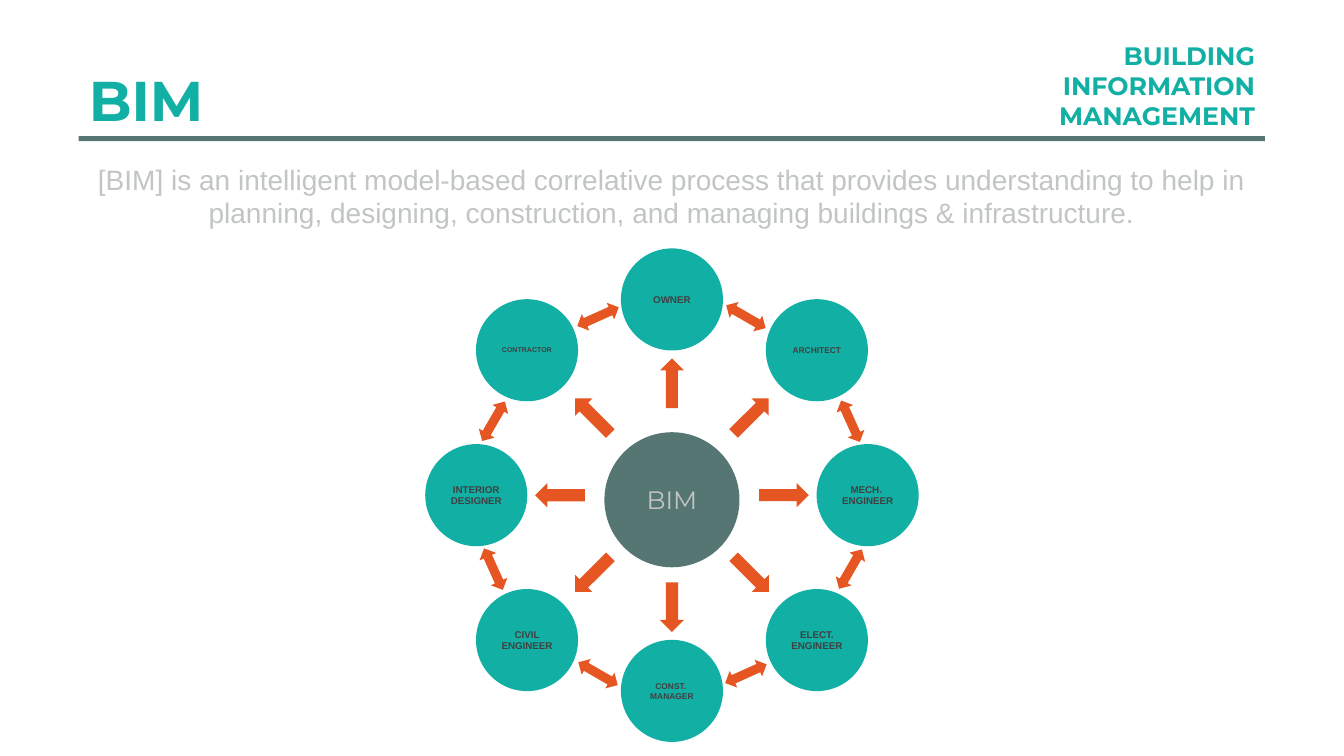
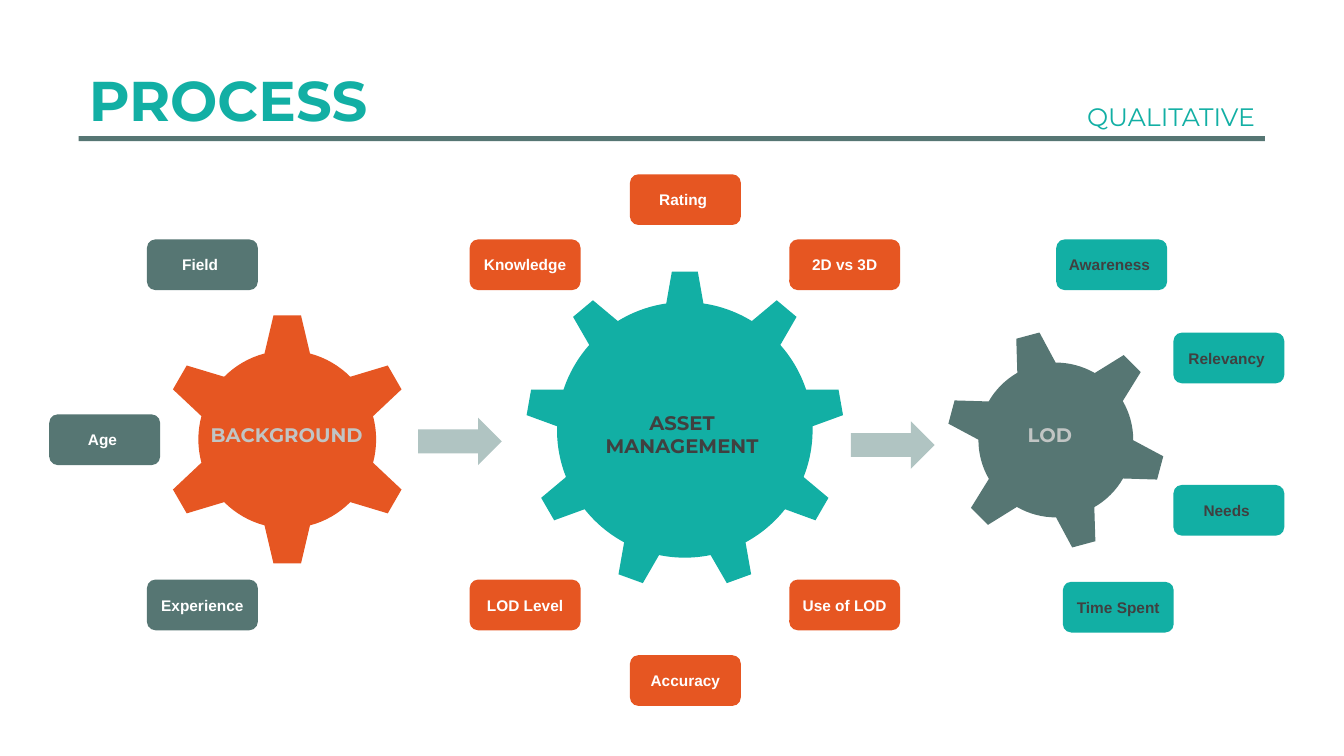
"""Build two slides: a ring of BIM roles and a gear process."""
from math import cos, radians, sin

from pptx import Presentation
from pptx.dml.color import RGBColor
from pptx.enum.shapes import MSO_SHAPE as SHAPE
from pptx.enum.text import MSO_ANCHOR as ANCHOR, MSO_AUTO_SIZE as AUTO, PP_ALIGN as ALIGN
from pptx.util import Pt

TEAL, SLATE, ORANGE, MIST = "12AFA4", "567673", "E65622", "B0C4C2"
SILVER, CHARCOAL, WHITE = "C1C5C4", "404040", "FFFFFF"
BODY, DISPLAY = "Arial", "Montserrat"
MARGIN, CONTENT_W = 56.2, 847.4
RIGHT_EDGE = MARGIN + CONTENT_W

DEFINITION = (
    "[BIM] is an intelligent model-based correlative process that provides understanding "
    "to help in planning, designing, construction, and managing buildings & infrastructure."
)
ROLES = [
    ("OWNER", 7), ("ARCHITECT", 6), ("MECH. \nENGINEER", 7), ("ELECT.\nENGINEER", 7),
    ("CONST. \nMANAGER", 6), ("CIVIL ENGINEER", 7), ("INTERIOR DESIGNER", 7), ("CONTRACTOR", 5),
]
RING_X, RING_Y = 480, 353.7
AXIS_REACH, DIAGONAL_REACH, SPOKE_REACH, LINK_REACH = 139.8, 146.4, 80, 138

GEARS = [
    ("BACKGROUND", SHAPE.GEAR_6, 205.2, 313.9, 181.4, 0, ORANGE, SILVER, 204.8),
    ("ASSET \nMANAGEMENT ", SHAPE.GEAR_9, 489.2, 307.1, 228.2, 0, TEAL, CHARCOAL, 489.2),
    ("LOD", SHAPE.GEAR_6, 754.2, 314.3, 158, -15, SLATE, SILVER, 749.9),
]
GEAR_LABEL_Y = 310.3
FACTORS = [
    (SLATE, WHITE, [("Field ", 105, 171), ("Age ", 35.2, 296), ("Experience ", 105, 414)]),
    (ORANGE, WHITE, [
        ("Knowledge ", 335.5, 171), ("Rating ", 450, 124.5), ("2D vs 3D", 563.8, 171),
        ("LOD Level", 335.5, 414), ("Accuracy", 450, 468), ("Use of LOD", 563.8, 414),
    ]),
    (TEAL, CHARCOAL, [
        ("Awareness ", 754.5, 171), ("Relevancy ", 838.2, 237.6),
        ("Needs ", 838.2, 346.4), ("Time Spent", 759.2, 415.6),
    ]),
]
FACTOR_W, FACTOR_H = 79.2, 36.2
FLOW_ARROWS = [(328.6, 315.3), (637.7, 317.9)]


def rgb(color):
    return RGBColor.from_string(color)


def write(part, text, size, color, font=BODY, bold=True, align=ALIGN.CENTER, anchor=ANCHOR.MIDDLE):
    frame = part.text_frame
    frame.text = text
    frame.word_wrap = True
    frame.auto_size = AUTO.NONE
    frame.vertical_anchor = anchor
    for paragraph in frame.paragraphs:
        paragraph.alignment = align
        paragraph.font.size = Pt(size)
        paragraph.font.name = font
        paragraph.font.bold = bold
        paragraph.font.color.rgb = rgb(color)


def add_figure(slide, kind, center_x, center_y, width, height, color, rotation=0):
    figure = slide.shapes.add_shape(
        kind, Pt(center_x - width / 2), Pt(center_y - height / 2), Pt(width), Pt(height))
    figure.shadow.inherit = False
    figure.fill.solid()
    figure.fill.fore_color.rgb = rgb(color)
    figure.line.fill.background()
    figure.rotation = rotation
    return figure


def add_label(slide, left, top, width, height, *text, **style):
    label = slide.shapes.add_textbox(Pt(left), Pt(top), Pt(width), Pt(height))
    write(label, *text, **style)
    return label


def add_titled_slide(deck, heading, subject, subject_top, subject_h, subject_bold):
    slide = deck.slides.add_slide(deck.slide_layouts[5])
    title = slide.shapes.title
    title.left, title.top, title.width, title.height = (
        Pt(MARGIN), Pt(43.2), Pt(600), Pt(55.4))
    write(title, heading, 40, TEAL, DISPLAY, align=ALIGN.LEFT, anchor=ANCHOR.TOP)
    add_figure(slide, SHAPE.RECTANGLE, MARGIN + CONTENT_W / 2, 99, CONTENT_W, 3.6, SLATE)
    subject_w = 230
    add_label(slide, RIGHT_EDGE - subject_w, subject_top, subject_w, subject_h, subject, 18, TEAL,
              DISPLAY, bold=subject_bold, align=ALIGN.RIGHT, anchor=ANCHOR.TOP)
    return slide


def on_ring(angle, reach):
    return RING_X + reach * cos(radians(angle)), RING_Y + reach * sin(radians(angle))


def build_roles(deck):
    slide = add_titled_slide(deck, "BIM", "BUILDING INFORMATION MANAGEMENT", 25.2, 72.7, True)
    definition = add_label(slide, MARGIN, 112.3, CONTENT_W, 55.4, DEFINITION, 20, SILVER,
                           bold=False, anchor=ANCHOR.TOP)
    definition.text_frame.paragraphs[0].line_spacing = Pt(24)
    hub = add_figure(slide, SHAPE.OVAL, RING_X, 357, 96.5, 96.5, SLATE)
    write(hub, "BIM", 18, SILVER, DISPLAY, bold=False)
    for index, (role, size) in enumerate(ROLES):
        angle = index * 45 - 90
        diagonal = index % 2
        reach = DIAGONAL_REACH if diagonal else AXIS_REACH
        circle = add_figure(slide, SHAPE.OVAL, *on_ring(angle, reach), 72.9, 72.9, TEAL)
        write(circle, role, size, CHARCOAL)
        add_figure(slide, SHAPE.RIGHT_ARROW, *on_ring(angle, SPOKE_REACH), 35.5, 17.3,
                   ORANGE, angle)
        tilt = index // 2 * 90 + (65.7 if diagonal else 30)
        add_figure(slide, SHAPE.LEFT_RIGHT_ARROW, *on_ring(angle + 22.5, LINK_REACH), 32.5, 13,
                   ORANGE, tilt)


def build_process(deck):
    slide = add_titled_slide(deck, "PROCESS", "QUALITATIVE", 69.1, 29, False)
    for name, kind, x, y, size, rotation, fill, ink, label_x in GEARS:
        add_figure(slide, kind, x, y, size, size, fill, rotation)
        add_label(slide, label_x - 84, GEAR_LABEL_Y - 20.5, 168, 41, name, 14, ink, DISPLAY)
    for fill, ink, factors in FACTORS:
        for factor, left, top in factors:
            box = add_figure(slide, SHAPE.ROUNDED_RECTANGLE, left + FACTOR_W / 2,
                             top + FACTOR_H / 2, FACTOR_W, FACTOR_H, fill)
            write(box, factor, 11, ink)
    for x, y in FLOW_ARROWS:
        add_figure(slide, SHAPE.RIGHT_ARROW, x, y, 59.8, 34, MIST)


def main():
    deck = Presentation()
    deck.slide_width, deck.slide_height = Pt(960), Pt(540)
    build_roles(deck)
    build_process(deck)
    deck.save("out.pptx")


if __name__ == "__main__":
    main()
